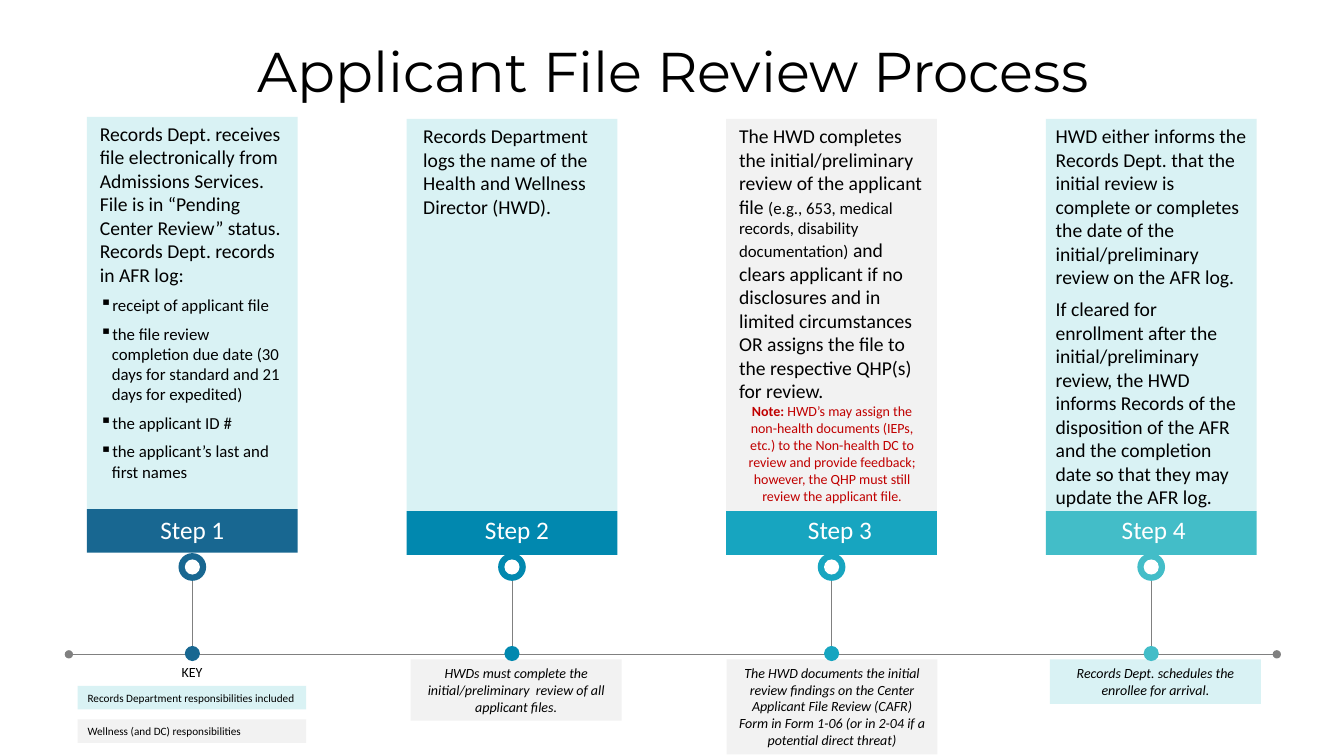
import pptx
import pptx.util
import pptx.dml.color
import pptx.enum.shapes
import pptx.enum.text
from dataclasses import dataclass
from lxml import etree
from pptx.oxml.ns import qn

SHAPE = pptx.enum.shapes.MSO_SHAPE
ALIGN = pptx.enum.text.PP_ALIGN


@dataclass(frozen=True)
class Theme:
    body: str = "Calibri"
    head: str = "Montserrat"
    black: str = "000000"
    white: str = "FFFFFF"
    gray: str = "808080"
    red: str = "C00000"
    aqua: str = "D9F2F4"
    pale: str = "F2F2F2"
    steps: tuple = ("186791", "0188AF", "17A5C0", "43BDC8")
    title: int = 40
    label: int = 18
    large: int = 14
    mid: int = 12
    small: int = 10
    tiny: int = 8


@dataclass
class Run:
    text: str
    size: int
    color: str = Theme.black
    font: str = Theme.body
    bold: bool = False
    slant: bool = False


@dataclass
class Para:
    runs: list
    center: bool = False
    above: int = 0
    below: int = 0
    bullet: str = ""


class Board:
    """Draws on one slide, with a grid of 160 columns by 90 rows."""

    def __init__(self, deck, theme):
        self.theme = theme
        self.wide = deck.slide_width / 160
        self.high = deck.slide_height / 90
        self.slide = deck.slides.add_slide(deck.slide_layouts[6])

    def place(self, col, row, cols, rows):
        return (round(col * self.wide), round(row * self.high),
                round(cols * self.wide), round(rows * self.high))

    def block(self, col, row, cols, rows, fill, kind=SHAPE.RECTANGLE):
        shape = self.slide.shapes.add_shape(kind, *self.place(col, row, cols, rows))
        shape.shadow.inherit = False
        shape.fill.solid()
        shape.fill.fore_color.rgb = pptx.dml.color.RGBColor.from_string(fill)
        shape.line.fill.background()

    def disc(self, col, row, size, fill):
        self.block(col - size / 2, row - size / 2, size, size, fill, SHAPE.OVAL)

    def line(self, col, row, col2, row2, ends=False):
        link = self.slide.shapes.add_connector(
            pptx.enum.shapes.MSO_CONNECTOR.STRAIGHT, *self.place(col, row, col2, row2))
        link.line.width = pptx.util.Pt(0.5)
        link.line.color.rgb = pptx.dml.color.RGBColor.from_string(self.theme.gray)
        props = link._element.spPr
        if ends:
            for tag in ("a:headEnd", "a:tailEnd"):
                etree.SubElement(props.find(qn("a:ln")), qn(tag), type="oval")
        etree.SubElement(props, qn("a:effectLst"))

    def text(self, col, row, cols, rows, paras):
        box = self.slide.shapes.add_textbox(*self.place(col, row, cols, rows))
        frame = box.text_frame
        frame.word_wrap = True
        for n, para in enumerate(paras):
            self.typeset(frame.add_paragraph() if n else frame.paragraphs[0], para)

    def typeset(self, line, para):
        line.alignment = ALIGN.CENTER if para.center else ALIGN.LEFT
        line.space_before = pptx.util.Pt(para.above)
        line.space_after = pptx.util.Pt(para.below)
        if para.bullet:
            props = line._p.get_or_add_pPr()
            dent = pptx.util.Inches(0.12)
            props.set("marL", str(dent))
            props.set("indent", str(-dent))
            etree.SubElement(props, qn("a:buChar"), char=para.bullet)
        for part in para.runs:
            run = line.add_run()
            run.text = part.text
            font = run.font
            font.name, font.size = part.font, pptx.util.Pt(part.size)
            font.bold, font.italic = part.bold, part.slant
            font.color.rgb = pptx.dml.color.RGBColor.from_string(part.color)

    def note(self, col, row, cols, rows, fill, para):
        self.block(col, row, cols, rows, fill)
        self.text(col, row, cols, rows, [para])


def main():
    theme = Theme()
    deck = pptx.Presentation()
    deck.slide_width = pptx.util.Inches(13.33)
    deck.slide_height = pptx.util.Inches(7.5)
    board = Board(deck, theme)

    # Wording of the four steps
    large, mid, small = theme.large, theme.mid, theme.small
    tasks = [
        "receipt of applicant file",
        "the file review completion due date (30 days for standard and 21 days for expedited)",
        "the applicant ID #",
        "the applicant’s last and first names",
    ]
    first = [
        Para([Run("Records Dept. receives file electronically from Admissions Services. "
                  "File is in “Pending Center Review” status.", large)]),
        Para([Run("Records Dept. records in AFR log:", large)], below=6),
    ] + [Para([Run(task, mid)], below=6, bullet="▪") for task in tasks]
    second = [Para([Run("Records Department logs the name of the Health and Wellness "
                        "Director (HWD).", large)])]
    third = [
        Para([Run("The HWD completes the initial/preliminary review of the applicant file ", large),
              Run("(e.g., 653, medical records, disability documentation)", mid),
              Run(" and clears applicant if no disclosures and in limited circumstances "
                  "OR assigns the file to the respective QHP(s) for review.", large)]),
        Para([Run("Note:", small, theme.red, bold=True),
              Run(" HWD’s may assign the non-health documents (IEPs, etc.) to the Non-health DC "
                  "to review and provide feedback; however, the QHP must still review the "
                  "applicant file.", small, theme.red)], center=True),
    ]
    fourth = [
        Para([Run("HWD either informs the Records Dept. that the initial review is complete or "
                  "completes the date of the initial/preliminary  review on the AFR log.", large)]),
        Para([Run("If cleared for enrollment after the initial/preliminary review, the HWD "
                  "informs Records of the disposition of the AFR and the completion date so "
                  "that they may update the AFR log.", large)], above=6),
    ]

    # Panel fill, text column, text row, text width, label shift, text
    steps = [
        (theme.aqua, 10.7, 13.9, 24.5, 0, first),
        (theme.aqua, 49.2, 14.16, 24.5, 0.6, second),
        (theme.pale, 86.8, 14.16, 24.5, 1, third),
        (theme.aqua, 124.5, 14.16, 25.1, 0.3, fourth),
    ]

    # Title and timeline
    board.text(16, 3.7, 128.2, 9.2, [Para(
        [Run("Applicant File Review Process", theme.title, font=theme.head)], center=True)])
    board.line(8.2, 77.9, 152, 77.9, ends=True)

    # Notes below the timeline
    notes = [
        (48.9, 7.3, theme.pale,
         "HWDs must complete the initial/preliminary  review of all applicant files."),
        (86.5, 11.3, theme.pale,
         "The HWD documents the initial review findings on the Center Applicant File Review "
         "(CAFR) Form in Form 1-06 (or in 2-04 if a potential direct threat)"),
        (125, 5.3, theme.aqua, "Records Dept. schedules the enrollee for arrival."),
    ]
    for col, rows, fill, words in notes:
        board.note(col, 78.5, 25.1, rows, fill,
                   Para([Run(words, small, slant=True)], center=True))

    # Panels, step bars and markers
    for n, (fill, col, row, cols, shift, paras) in enumerate(steps):
        axis, tint = 22.9 + 38.05 * n, theme.steps[n]
        board.line(axis, 68.5, axis, 77.6)
        board.block(axis - 12.55, row, 25.1, 46.7, fill)
        board.block(axis - 12.55, row + 46.7, 25.1, 5.2, tint)
        board.text(axis + shift - 10.9, 60.6, 21.8, 4.8, [Para(
            [Run(f"Step {n + 1}", theme.label, theme.white)], center=True)])
        board.text(col, row, cols, 46.7, paras)
        board.disc(axis, 67.5, 3.3, tint)
        board.disc(axis, 67.5, 1.8, theme.white)
        board.disc(axis, 77.8, 1.8, tint)

    # Key
    board.text(7.2, 78.4, 31.3, 3.2, [Para([Run("KEY", small)], center=True)])
    keys = [(theme.aqua, "Records Department responsibilities included"),
            (theme.pale, "Wellness (and DC) responsibilities")]
    for n, (fill, words) in enumerate(keys):
        board.note(9.25, 81.65 + 4 * n, 27.2, 2.8, fill, Para([Run(words, theme.tiny)]))

    deck.save("out.pptx")


if __name__ == "__main__":
    main()
